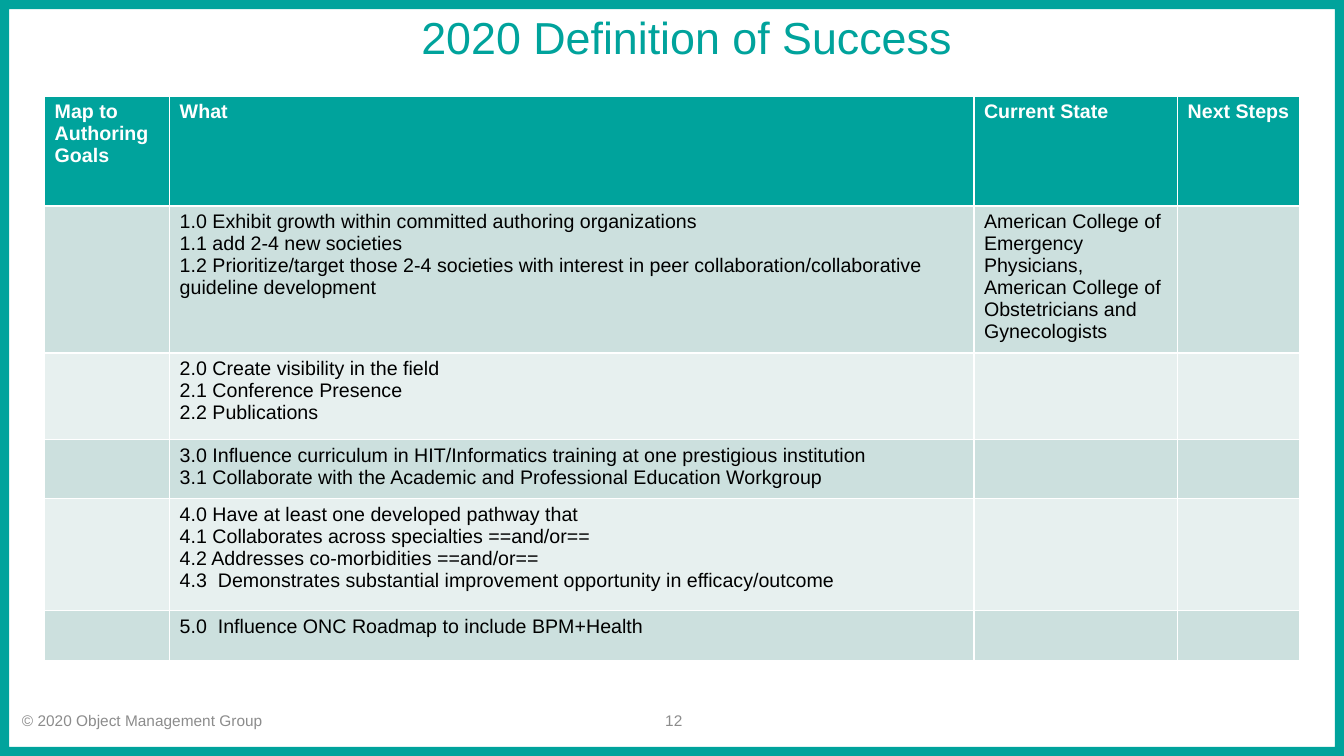
"""Build the 2020 Definition of Success slide with its goals table."""
from pptx import Presentation
from pptx.dml.color import RGBColor as RGB
from pptx.enum.shapes import MSO_SHAPE as SHAPE
from pptx.enum.text import MSO_ANCHOR as ANCHOR, MSO_AUTO_SIZE as AUTOSIZE, PP_ALIGN as ALIGN
from pptx.util import Pt

THEME = {
    "teal": RGB.from_string("00A39C"),
    "bands": [RGB.from_string("CCE0DE"), RGB.from_string("E7F0EF")],
    "title": {"size": Pt(32), "color": "00A39C", "bold": False},
    "header": {"size": Pt(14), "color": "FFFFFF", "bold": True},
    "body": {"size": Pt(14), "color": "000000", "bold": False},
    "footer": {"size": Pt(11), "color": "8C8C8C", "bold": False},
}


def write(tf, text, style, align=ALIGN.LEFT):
    tf.text = text
    for p in tf.paragraphs:
        p.alignment = align
        p.font.name = "Arial"
        for name, value in THEME[style].items():
            if name == "color":
                p.font.color.rgb = RGB.from_string(value)
            else:
                setattr(p.font, name, value)


prs = Presentation()
prs.slide_width, prs.slide_height = Pt(960), Pt(540)
s = prs.slides.add_slide(prs.slide_layouts[5])

frame = s.shapes.add_shape(SHAPE.FRAME, 0, 0, prs.slide_width, prs.slide_height)
frame.adjustments[0] = 0.012
frame.shadow.inherit = False
frame.fill.solid()
frame.fill.fore_color.rgb = THEME["teal"]
frame.line.fill.background()

title = s.shapes.title
title.left, title.top, title.width, title.height = Pt(95.8), Pt(6.5), Pt(798.5), Pt(44)
tf = title.text_frame
tf.auto_size, tf.vertical_anchor = AUTOSIZE.NONE, ANCHOR.MIDDLE
write(tf, "2020 Definition of Success ", "title", ALIGN.CENTER)
tf.paragraphs[0].line_spacing = 0.9

col_widths = [89.3, 574.5, 145.5, 87.1]
row_heights = [78.5, 105, 62, 41.8, 80, 36]
header = ["Map to Authoring Goals", "What", "Current State", "Next Steps"]
goals = [
    """1.0 Exhibit growth within committed authoring organizations
1.1 add 2-4 new societies
1.2 Prioritize/target those 2-4 societies with interest in peer collaboration/collaborative guideline development""",
    """2.0 Create visibility in the field
2.1 Conference Presence
2.2 Publications""",
    """3.0 Influence curriculum in HIT/Informatics training at one prestigious institution
3.1 Collaborate with the Academic and Professional Education Workgroup""",
    """4.0 Have at least one developed pathway that
4.1 Collaborates across specialties ==and/or==
4.2 Addresses co-morbidities ==and/or==
4.3  Demonstrates substantial improvement opportunity in efficacy/outcome""",
    "5.0  Influence ONC Roadmap to include BPM+Health",
]
states = ["American College of Emergency Physicians, "
          "American College of Obstetricians and Gynecologists", "", "", "", ""]
rows = [header] + [["", goal, state, ""] for goal, state in zip(goals, states)]

table = s.shapes.add_table(len(rows), len(header), Pt(31.9), Pt(68.6),
                           Pt(sum(col_widths)), Pt(sum(row_heights))).table
for column, width in zip(table.columns, col_widths):
    column.width = Pt(width)
for i, (texts, height) in enumerate(zip(rows, row_heights)):
    table.rows[i].height = Pt(height)
    for j, text in enumerate(texts):
        cell = table.cell(i, j)
        cell.fill.solid()
        cell.fill.fore_color.rgb = THEME["bands"][(i - 1) % 2] if i else THEME["teal"]
        write(cell.text_frame, text, "body" if i else "header")

footers = [
    ("© 2020 Object Management Group", 8.6, 314, ALIGN.LEFT),
    ("12", 465, 29.5, ALIGN.RIGHT),
]
for text, left, width, align in footers:
    tf = s.shapes.add_textbox(Pt(left), Pt(500.4), Pt(width), Pt(28.8)).text_frame
    tf.word_wrap, tf.vertical_anchor = True, ANCHOR.MIDDLE
    write(tf, text, "footer", align)

prs.save("out.pptx")
